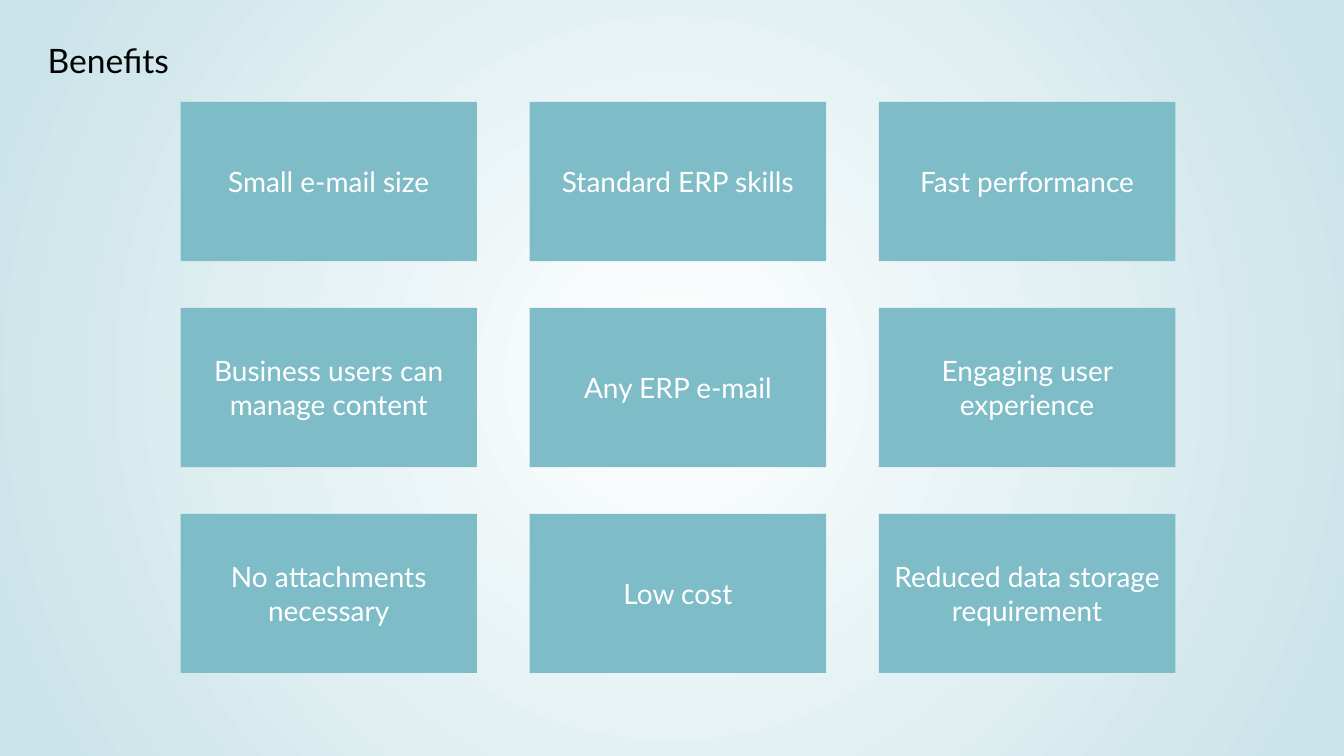
from lxml import etree
from pptx import Presentation
from pptx import util as u
from pptx.dml.color import RGBColor
from pptx.enum import shapes, text
from pptx.oxml.ns import qn

COLOURS = {
    "ink": "000000",
    "card": "7EBCC7",
    "card_text": "FFFFFF",
    "glow": "FFFFFF",
    "edge": "CBE4E9",
}
BENEFITS = [
    ["Small e-mail size", "Standard ERP skills", "Fast performance"],
    ["Business users can manage content", "Any ERP e-mail", "Engaging user experience"],
    ["No attachments necessary", "Low cost", "Reduced data storage requirement"],
]
GRID_LEFT, GRID_TOP = 4.55, 2.57
COLUMN_STEP, ROW_STEP = 8.8, 5.19
CARD_WIDTH, CARD_HEIGHT = 7.47, 4.01


def colour(name):
    """Return the named palette colour."""
    return RGBColor.from_string(COLOURS[name])


def style_paragraph(paragraph, size, colour_name, alignment):
    """Set the font and alignment of a paragraph."""
    paragraph.alignment = alignment
    paragraph.font.name = "Lato"
    paragraph.font.size = u.Pt(size)
    paragraph.font.color.rgb = colour(colour_name)


def paint_background(slide):
    """Fill the background with a glow spreading from the centre."""
    fill = slide.background.fill
    fill.gradient()
    for stop, (name, position) in zip(fill.gradient_stops, [("glow", 0), ("edge", 0.94)]):
        stop.color.rgb = colour(name)
        stop.position = position
    gradient = slide.element.find(".//" + qn("a:gradFill"))
    gradient.remove(gradient.find(qn("a:lin")))
    glow = etree.SubElement(gradient, qn("a:path"), path="circle")
    etree.SubElement(glow, qn("a:fillToRect"), l="50000", t="50000", r="50000", b="50000")


def write_title(slide, wording):
    """Place and format the slide title."""
    title = slide.shapes.title
    title.left, title.top = u.Cm(1.2), u.Cm(0.46)
    title.width, title.height = u.Cm(31.47), u.Cm(2.11)
    frame = title.text_frame
    frame.text = wording
    frame.auto_size = text.MSO_AUTO_SIZE.NONE
    frame.vertical_anchor = text.MSO_ANCHOR.MIDDLE
    frame.margin_left = frame.margin_right = frame.margin_top = frame.margin_bottom = 0
    style_paragraph(frame.paragraphs[0], 24, "ink", text.PP_ALIGN.LEFT)


def add_card(slide, left, top, benefit):
    """Add one benefit card at a position in centimetres."""
    card = slide.shapes.add_shape(
        shapes.MSO_SHAPE.RECTANGLE,
        u.Cm(left), u.Cm(top), u.Cm(CARD_WIDTH), u.Cm(CARD_HEIGHT),
    )
    card.shadow.inherit = False
    card.fill.solid()
    card.fill.fore_color.rgb = colour("card")
    card.line.fill.background()
    frame = card.text_frame
    frame.word_wrap = True
    frame.vertical_anchor = text.MSO_ANCHOR.MIDDLE
    frame.margin_left = frame.margin_right = u.Cm(0.25)
    frame.margin_top = frame.margin_bottom = u.Cm(0.2)
    frame.text = benefit
    style_paragraph(frame.paragraphs[0], 20, "card_text", text.PP_ALIGN.CENTER)


def main():
    """Build and save the benefits slide."""
    deck = Presentation()
    deck.slide_width, deck.slide_height = u.Cm(33.87), u.Cm(19.05)
    slide = deck.slides.add_slide(deck.slide_layouts.get_by_name("Title Only"))
    paint_background(slide)
    write_title(slide, "Benefits")
    for row, benefits in enumerate(BENEFITS):
        for column, benefit in enumerate(benefits):
            add_card(slide, GRID_LEFT + column * COLUMN_STEP, GRID_TOP + row * ROW_STEP, benefit)
    deck.save("out.pptx")


if __name__ == "__main__":
    main()
